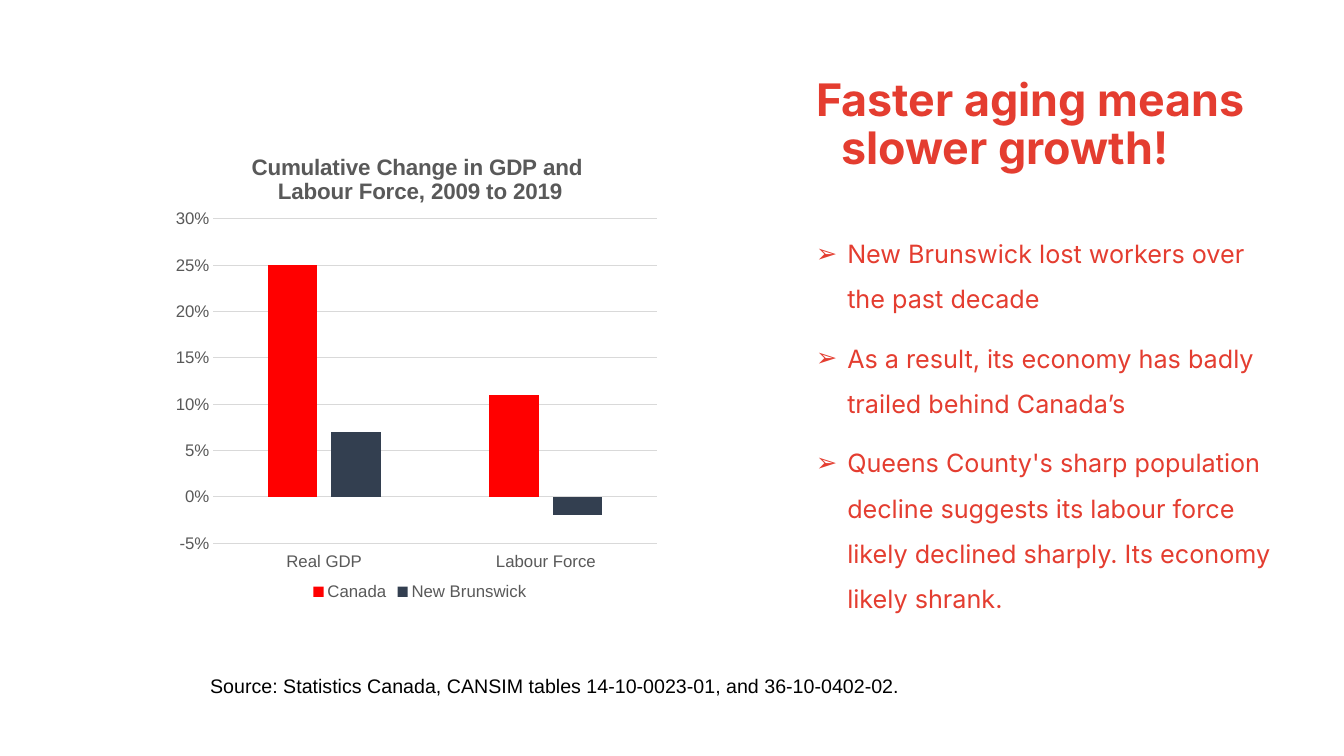
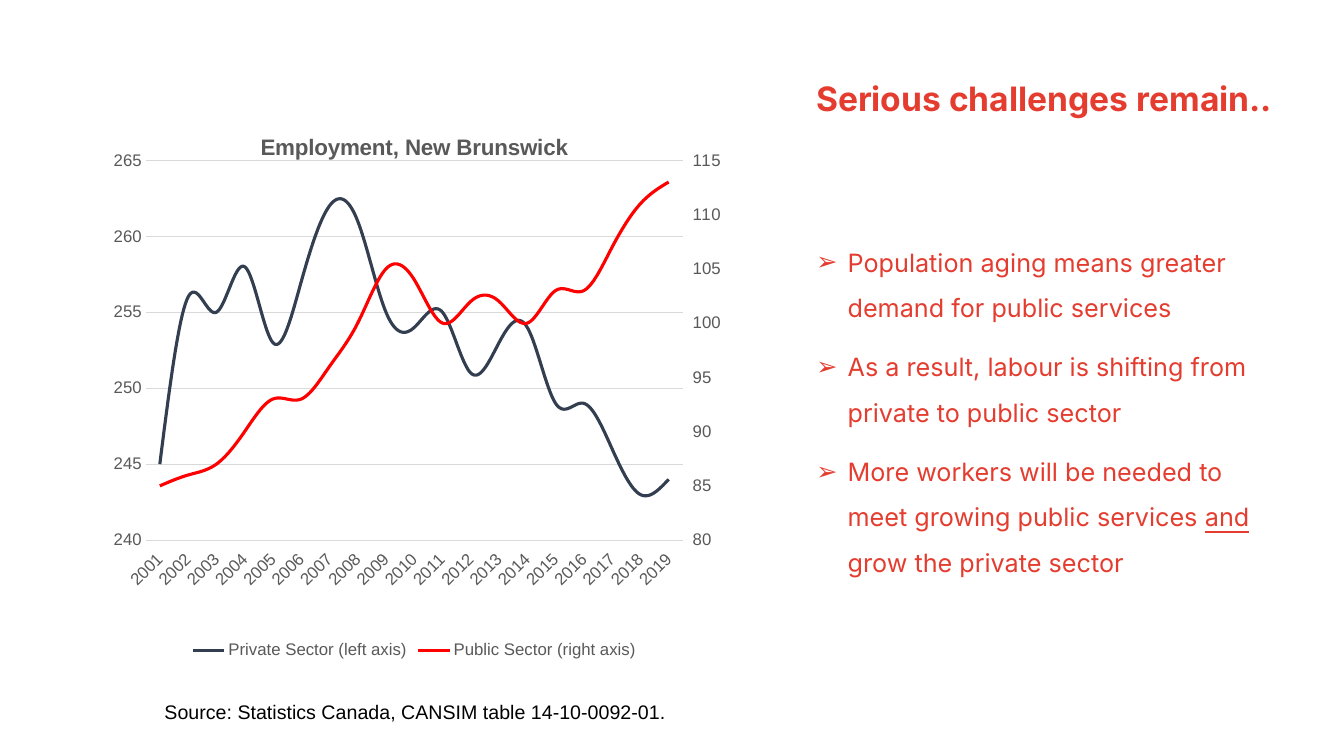
from copy import deepcopy
from dataclasses import dataclass

from lxml import etree
from pptx import Presentation
from pptx.chart.axis import ValueAxis
from pptx.chart.chart import Chart
from pptx.chart.data import CategoryChartData
from pptx.dml.color import RGBColor
from pptx.enum.chart import XL_CHART_TYPE, XL_LEGEND_POSITION, XL_TICK_LABEL_POSITION, XL_TICK_MARK
from pptx.enum.text import PP_ALIGN
from pptx.oxml.ns import qn
from pptx.slide import Slide
from pptx.util import Emu, Inches, Pt

COLUMN = XL_CHART_TYPE.COLUMN_CLUSTERED
LINE = XL_CHART_TYPE.LINE
LEGEND_BOTTOM = XL_LEGEND_POSITION.BOTTOM
LABELS_LOW = XL_TICK_LABEL_POSITION.LOW
TICK_NONE = XL_TICK_MARK.NONE
TICK_OUTSIDE = XL_TICK_MARK.OUTSIDE
LEFT = PP_ALIGN.LEFT

SLIDE_WIDTH = Inches(13.33)
SLIDE_HEIGHT = Inches(7.5)
BLANK_LAYOUT = 6


@dataclass(frozen=True)
class Theme:
    accent: RGBColor = RGBColor(0xE4, 0x3D, 0x30)
    canada_red: RGBColor = RGBColor(0xFF, 0x00, 0x00)
    slate: RGBColor = RGBColor(0x33, 0x3F, 0x50)
    chart_text: RGBColor = RGBColor(0x59, 0x59, 0x59)
    grid: RGBColor = RGBColor(0xD9, 0xD9, 0xD9)
    black: RGBColor = RGBColor(0x00, 0x00, 0x00)
    text_font: str = "Inter"
    chart_font: str = "Arial"
    body_size: int = 18
    source_size: int = 14
    chart_title_size: int = 16
    label_size: int = 12


THEME = Theme()


@dataclass(frozen=True)
class Box:
    """Percentages of the slide's width and height."""

    left: float
    top: float
    width: float
    height: float

    def lengths(self) -> tuple[Emu, Emu, Emu, Emu]:
        return (
            Emu(round(SLIDE_WIDTH * self.left / 100)),
            Emu(round(SLIDE_HEIGHT * self.top / 100)),
            Emu(round(SLIDE_WIDTH * self.width / 100)),
            Emu(round(SLIDE_HEIGHT * self.height / 100)),
        )


@dataclass(frozen=True)
class Scale:
    minimum: float
    maximum: float
    step: float
    number_format: str = "General"


@dataclass(frozen=True)
class Series:
    name: str
    values: tuple[float, ...]
    color: RGBColor


@dataclass(frozen=True)
class ChartPanel:
    box: Box
    kind: int
    title: tuple[str, ...]
    title_corner: tuple[float, float]
    plot: tuple[float, float, float, float]
    categories: tuple[str, ...]
    series: tuple[Series, ...]
    scale: Scale
    right_scale: Scale | None = None


@dataclass(frozen=True)
class Page:
    title: str
    title_size: int
    title_spacing: float
    bullets: tuple[str, ...]
    bullets_box: Box
    source: str
    source_box: Box
    chart: ChartPanel


TITLE_BOX = Box(58.1, 9.6, 38.18, 17.33)

PAGES = (
    Page(
        "Faster aging means slower growth!", 32, 0.9,
        (
            "New Brunswick lost workers over the past decade",
            "As a result, its economy has badly trailed behind Canada’s",
            "Queens County's sharp population decline suggests its labour force "
            "likely declined sharply. Its economy likely shrank.",
        ),
        Box(58.1, 28.85, 38.18, 57.73),
        "Source: Statistics Canada, CANSIM tables 14-10-0023-01, and 36-10-0402-02.",
        Box(14.9, 88.53, 70.2, 4.53),
        ChartPanel(
            Box(12.5, 18, 37.5, 62), COLUMN,
            ("Cumulative Change in GDP and ", "Labour Force, 2009 to 2019"),
            (0.16, 0.03), (0.09, 0.177, 0.88, 0.692),
            ("Real GDP", "Labour Force"),
            (
                Series("Canada", (0.25, 0.11), THEME.canada_red),
                Series("New Brunswick", (0.07, -0.02), THEME.slate),
            ),
            Scale(-0.05, 0.3, 0.05, "0%"),
        ),
    ),
    Page(
        "Serious challenges remain..", 24, 1.0,
        (
            "Population aging means greater demand for public services",
            "As a result, labour is shifting from private to public sector",
            "More workers will be needed to meet growing public services "
            "_and_ grow the private sector",
        ),
        Box(58.13, 30, 38.18, 57.73),
        "Source: Statistics Canada, CANSIM table 14-10-0092-01.",
        Box(11.5, 91.9, 67.28, 4.53),
        ChartPanel(
            Box(7.8, 14.8, 46.05, 72.93), LINE,
            ("Employment, New Brunswick",),
            (0.245, 0.03), (0.066, 0.088, 0.868, 0.689),
            tuple(str(year) for year in range(2001, 2020)),
            (
                Series(
                    "Private Sector (left axis)",
                    (245, 256, 255, 258, 253, 257, 262, 261, 255, 254,
                     255, 251, 253, 254, 249, 249, 246, 243, 244),
                    THEME.slate,
                ),
                Series(
                    "Public Sector (right axis)",
                    (85, 86, 87, 90, 93, 93, 96, 100, 105, 104,
                     100, 102, 102, 100, 103, 103, 107, 111, 113),
                    THEME.canada_red,
                ),
            ),
            Scale(240, 265, 5),
            Scale(80, 115, 5),
        ),
    ),
)


def style_font(font, name: str, size: int, color: RGBColor, bold: bool = False) -> None:
    font.name = name
    font.size = Pt(size)
    font.bold = bold
    font.color.rgb = color


def add_text(slide: Slide, box: Box, lines: tuple[str, ...]):
    frame = slide.shapes.add_textbox(*box.lengths()).text_frame
    frame.word_wrap = True
    for index, line in enumerate(lines):
        paragraph = frame.paragraphs[0] if index == 0 else frame.add_paragraph()
        paragraph.alignment = LEFT
        for position, part in enumerate(line.split("_")):
            run = paragraph.add_run()
            run.text = part
            if position % 2:
                run.font.underline = True
    return frame.paragraphs


def indent(paragraph, margin: float, first_line: float) -> None:
    properties = paragraph._p.get_or_add_pPr()
    properties.set("marL", str(Inches(margin)))
    properties.set("indent", str(Inches(first_line)))


def add_bullet(paragraph) -> None:
    properties = paragraph._p.get_or_add_pPr()
    color = etree.SubElement(properties, qn("a:buClr"))
    etree.SubElement(color, qn("a:srgbClr"), val=str(THEME.accent))
    etree.SubElement(properties, qn("a:buFont"), typeface=THEME.chart_font)
    etree.SubElement(properties, qn("a:buChar"), char="➢")


def add_title(slide: Slide, page: Page) -> None:
    paragraph = add_text(slide, TITLE_BOX, (page.title,))[0]
    indent(paragraph, 0.5, -0.25)
    paragraph.line_spacing = page.title_spacing
    style_font(paragraph.font, THEME.text_font, page.title_size, THEME.accent, True)


def add_bullets(slide: Slide, page: Page) -> None:
    for index, paragraph in enumerate(add_text(slide, page.bullets_box, page.bullets)):
        indent(paragraph, 0.56, -0.31)
        paragraph.line_spacing = 1.5
        if index:
            paragraph.space_before = Pt(10)
        add_bullet(paragraph)
        style_font(paragraph.font, THEME.text_font, THEME.body_size, THEME.accent)


def add_source(slide: Slide, page: Page) -> None:
    paragraph = add_text(slide, page.source_box, (page.source,))[0]
    style_font(paragraph.font, THEME.chart_font, THEME.source_size, THEME.black)


def place(parent, values: tuple[float, ...], inner: bool = False) -> None:
    layout = parent.find(qn("c:layout"))
    if layout is None:
        layout = etree.Element(qn("c:layout"))
        text = parent.find(qn("c:tx"))
        parent.insert(0 if text is None else parent.index(text) + 1, layout)
    manual = etree.SubElement(layout, qn("c:manualLayout"))
    if inner:
        etree.SubElement(manual, qn("c:layoutTarget"), val="inner")
    for mode in ("xMode", "yMode"):
        etree.SubElement(manual, qn(f"c:{mode}"), val="edge")
    for key, value in zip("xywh", values):
        etree.SubElement(manual, qn(f"c:{key}"), val=str(value))


def set_scale(axis: ValueAxis, scale: Scale) -> None:
    axis.minimum_scale = scale.minimum
    axis.maximum_scale = scale.maximum
    axis.major_unit = scale.step


def style_axes(chart: Chart, panel: ChartPanel) -> None:
    for axis in (chart.category_axis, chart.value_axis):
        axis.major_tick_mark = axis.minor_tick_mark = TICK_NONE
        style_font(axis.tick_labels.font, THEME.chart_font, THEME.label_size, THEME.chart_text)
    value_axis = chart.value_axis
    set_scale(value_axis, panel.scale)
    value_axis.tick_labels.number_format = panel.scale.number_format
    value_axis.tick_labels.number_format_is_linked = False
    value_axis.format.line.fill.background()
    chart.category_axis.tick_label_position = LABELS_LOW
    for line in (chart.category_axis.format.line, value_axis.major_gridlines.format.line):
        line.color.rgb = THEME.grid
        line.width = Pt(0.75)


def add_right_axis(chart: Chart, scale: Scale) -> None:
    left_plot = chart.plots[0]._element
    right_plot = deepcopy(left_plot)
    left_plot.addnext(right_plot)
    left_plot.remove(left_plot.findall(qn("c:ser"))[1])
    right_plot.remove(right_plot.findall(qn("c:ser"))[0])
    categories = deepcopy(chart.category_axis._element)
    values = deepcopy(chart.value_axis._element)
    chart.value_axis._element.addnext(values)
    values.addnext(categories)
    for element, identifier in zip(right_plot.findall(qn("c:axId")), ("5001", "5002")):
        element.set("val", identifier)
    for axis, own, other in ((categories, "5001", "5002"), (values, "5002", "5001")):
        axis.find(qn("c:axId")).set("val", own)
        axis.find(qn("c:crossAx")).set("val", other)
    categories.find(qn("c:delete")).set("val", "1")
    values.find(qn("c:axPos")).set("val", "r")
    values.find(qn("c:crosses")).set("val", "max")
    right_axis = ValueAxis(values)
    right_axis.has_major_gridlines = False
    right_axis.major_tick_mark = TICK_OUTSIDE
    set_scale(right_axis, scale)


def add_chart(slide: Slide, panel: ChartPanel) -> None:
    data = CategoryChartData()
    data.categories = panel.categories
    for series in panel.series:
        data.add_series(series.name, series.values)
    chart = slide.shapes.add_chart(panel.kind, *panel.box.lengths(), data).chart
    style_font(chart.font, THEME.chart_font, THEME.label_size, THEME.chart_text)
    chart.has_title = True
    frame = chart.chart_title.text_frame
    for index, line in enumerate(panel.title):
        paragraph = frame.paragraphs[0] if index == 0 else frame.add_paragraph()
        paragraph.text = line
        style_font(paragraph.font, THEME.chart_font, THEME.chart_title_size, THEME.chart_text, True)
    place(chart.chart_title._element, panel.title_corner)
    place(chart.plots[0]._element.getparent(), panel.plot, True)
    chart.has_legend = True
    chart.legend.position = LEGEND_BOTTOM
    chart.legend.include_in_layout = False
    style_font(chart.legend.font, THEME.chart_font, THEME.label_size, THEME.chart_text)
    style_axes(chart, panel)
    plot = chart.plots[0]
    plot.vary_by_categories = False
    if panel.kind == COLUMN:
        plot.gap_width, plot.overlap = 219, -27
    for drawn, series in zip(plot.series, panel.series):
        if panel.kind == COLUMN:
            drawn.invert_if_negative = False
            drawn.format.fill.solid()
            drawn.format.fill.fore_color.rgb = series.color
        else:
            drawn.smooth = True
            drawn.format.line.color.rgb = series.color
            drawn.format.line.width = Pt(2.25)
    if panel.right_scale:
        labels = chart.category_axis._element.find(qn("c:txPr"))
        labels.find(qn("a:bodyPr")).set("rot", "-2700000")
        add_right_axis(chart, panel.right_scale)


def main() -> None:
    presentation = Presentation()
    presentation.slide_width, presentation.slide_height = SLIDE_WIDTH, SLIDE_HEIGHT
    for page in PAGES:
        slide = presentation.slides.add_slide(presentation.slide_layouts[BLANK_LAYOUT])
        add_title(slide, page)
        add_bullets(slide, page)
        add_source(slide, page)
        add_chart(slide, page.chart)
    presentation.save("out.pptx")


if __name__ == "__main__":
    main()
